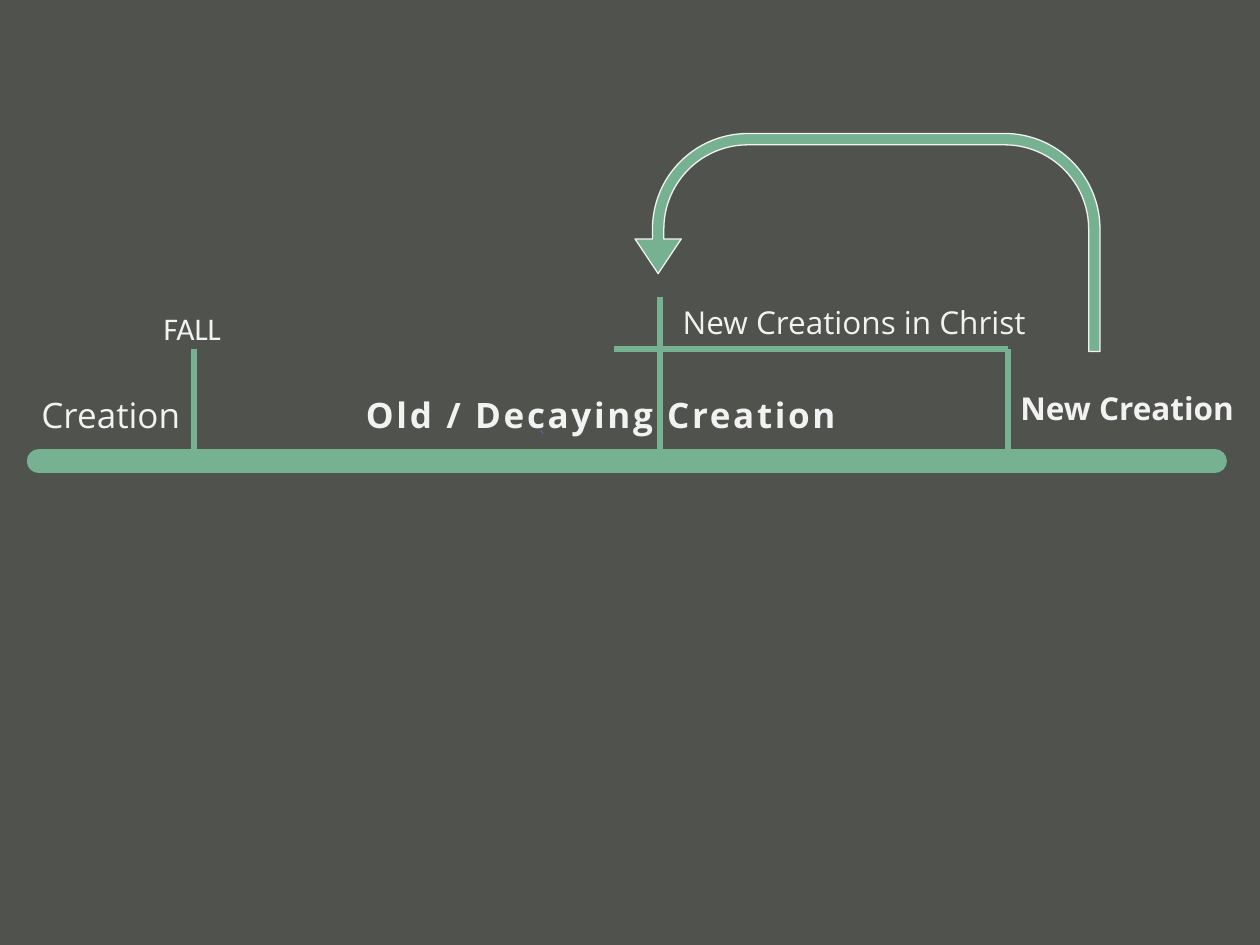
from lxml.etree import SubElement
from pptx import Presentation
from pptx.dml.color import RGBColor
from pptx.enum.shapes import MSO_CONNECTOR as Connector, MSO_SHAPE as Shape
from pptx.enum.text import MSO_AUTO_SIZE as AutoSize, PP_ALIGN as Align
from pptx.oxml.ns import qn
from pptx.util import Inches, Pt

COLORS = {"background": "50524E", "green": "76B192", "text": "F2F2F2", "blue": "4472C4"}
AXIS_Y, BRANCH_Y = 3.66, 2.77
FALL_X, CHRIST_X, END_X = 1.54, 5.24, 8

AXIS = (0.31, AXIS_Y, 9.64, AXIS_Y, 14)
MARKERS = [
    (FALL_X, BRANCH_Y, FALL_X, 3.75, 3),
    (END_X, BRANCH_Y, END_X, AXIS_Y, 3),
    (CHRIST_X, AXIS_Y, CHRIST_X, 2.36, 3.5),
    (4.87, BRANCH_Y, END_X, BRANCH_Y, 3.5),
]
LABELS = [
    ("Creation", (0.23, 3.07, 1.32, 0.44), 20, "Open Sans", False),
    ("FALL", (1.2, 2.4, 0.68, 0.4), 18, "Calibri", False),
    ("Old / Decaying Creation", (2.76, 3.07, 4.02, 0.44), 20, "Open Sans", True),
    ("New Creation", (END_X, 3.04, 1.91, 0.4), 18, "Open Sans", True),
    ("New Creations in Christ", (5.32, 2.36, 2.96, 0.4), 18, "Open Sans", False),
]
ARROW_BOX = (5.04, 1.06, 3.69, 1.73)
ARROW_ADJUSTMENTS = (0.052, 0.106, 0.159, 0.438, 0.643)
ARC_BOX = (4.26, 3.42, 0.05, 0.05)


def color(name):
    return RGBColor.from_string(COLORS[name])


def add_line(slide, x1, y1, x2, y2, width):
    line = slide.shapes.add_connector(Connector.STRAIGHT, *map(Inches, (x1, y1, x2, y2)))
    line.line.color.rgb = color("green")
    line.line.width = Pt(width)
    SubElement(line._element.spPr, qn("a:effectLst"))
    return line


def add_label(slide, text, box, size, font, bold):
    label = slide.shapes.add_textbox(*map(Inches, box))
    frame = label.text_frame
    frame.text = text
    frame.word_wrap = False
    frame.auto_size = AutoSize.SHAPE_TO_FIT_TEXT
    run = frame.paragraphs[0].runs[0]
    run.font.size = Pt(size)
    run.font.name = font
    run.font.bold = bold
    run.font.color.rgb = color("text")
    return label


def add_outline(slide, kind, box, line_color, width):
    shape = slide.shapes.add_shape(kind, *map(Inches, box))
    shape.shadow.inherit = False
    shape.fill.background()
    shape.line.color.rgb = color(line_color)
    shape.line.width = Pt(width)
    return shape


def main():
    presentation = Presentation()
    presentation.slide_width, presentation.slide_height = Inches(10), Inches(7.5)
    slide = presentation.slides.add_slide(presentation.slide_layouts[6])
    slide.background.fill.solid()
    slide.background.fill.fore_color.rgb = color("background")

    axis = add_line(slide, *AXIS)
    axis.line._get_or_add_ln().set("cap", "rnd")
    add_outline(slide, Shape.ARC, ARC_BOX, "blue", 0.5)
    for marker in MARKERS:
        add_line(slide, *marker)

    arrow = add_outline(slide, Shape.U_TURN_ARROW, ARROW_BOX, "text", 0)
    arrow.fill.solid()
    arrow.fill.fore_color.rgb = color("green")
    for index, value in enumerate(ARROW_ADJUSTMENTS):
        arrow.adjustments[index] = value
    arrow._element.spPr.xfrm.set("flipH", "1")

    labels = {label[0]: add_label(slide, *label) for label in LABELS}
    paragraph = labels["Old / Decaying Creation"].text_frame.paragraphs[0]
    paragraph.alignment = Align.CENTER
    paragraph.runs[0]._r.get_or_add_rPr().set("spc", "150")

    presentation.save("out.pptx")


if __name__ == "__main__":
    main()
